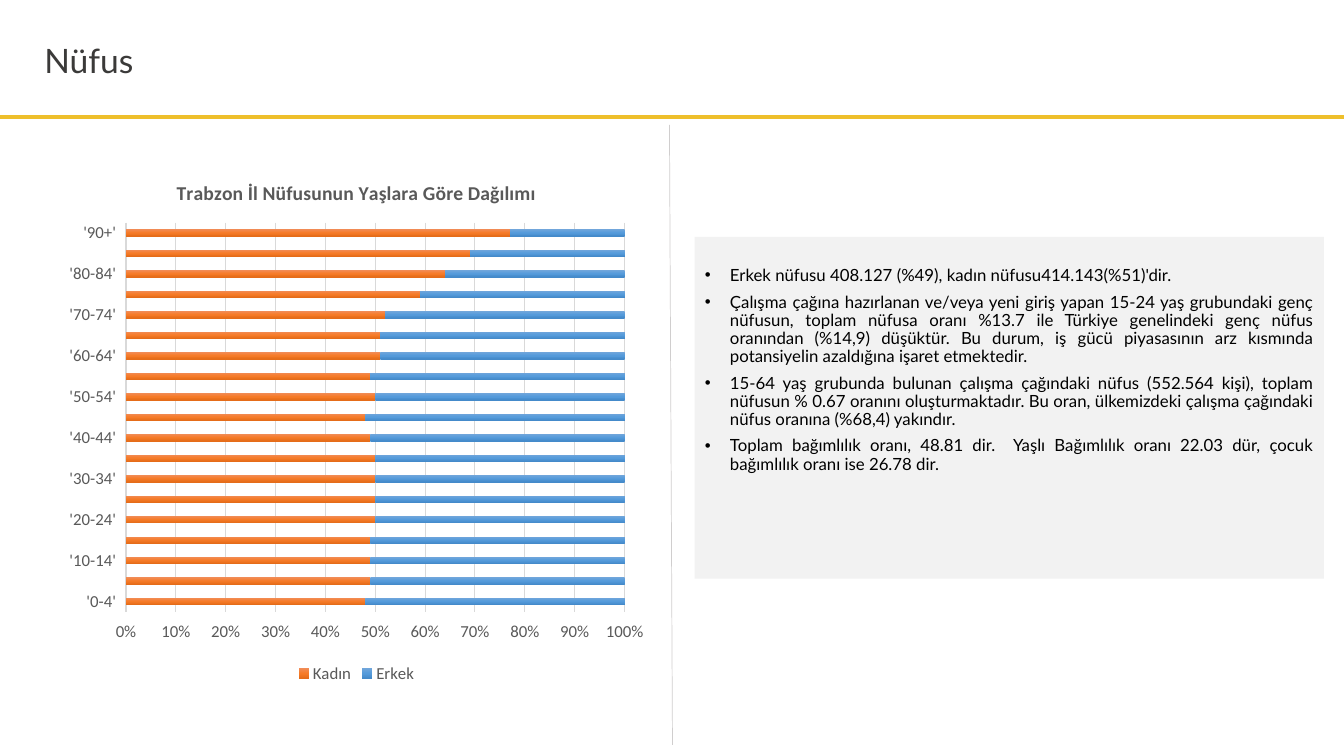
from dataclasses import dataclass

from lxml import etree
from pptx import Presentation
from pptx.chart.data import CategoryChartData
from pptx.dml.color import RGBColor
from pptx.enum import chart as charts, shapes, text
from pptx.oxml import parse_xml
from pptx.oxml.ns import nsdecls, qn
from pptx.util import Inches, Pt


@dataclass(frozen=True)
class Theme:
    text_font: str = "Lato"
    chart_font: str = "Calibri"
    title_size: int = 24
    chart_title_size: int = 14
    body_size: int = 12
    title_color: str = "3B3A39"
    body_color: str = "000000"
    panel: str = "F2F2F2"
    rule: str = "EEBF2B"
    divider: str = "D0CECE"
    label: str = "595959"
    grid: str = "D9D9D9"
    women: tuple = ("F18C57", "F67B28", "E56C19")
    men: tuple = ("71A6DB", "559BDB", "448ACA")


THEME = Theme()
AGE_GROUPS = [f"'{age}-{age + 4}'" for age in range(0, 90, 5)] + ["'90+'"]
WOMEN_SHARE = [48, 49, 49, 49, 50, 50, 50, 50, 49, 48, 50, 49, 51, 51, 52, 59, 64, 69, 77]
MEN_SHARE = [100 - share for share in WOMEN_SHARE]
FINDINGS = [
    "Erkek nüfusu 408.127 (%49), kadın nüfusu414.143(%51)'dir.",
    "Çalışma çağına hazırlanan ve/veya yeni giriş yapan 15-24 yaş grubundaki genç "
    "nüfusun, toplam nüfusa oranı %13.7 ile Türkiye genelindeki genç nüfus oranından "
    "(%14,9) düşüktür. Bu durum, iş gücü piyasasının arz kısmında potansiyelin "
    "azaldığına işaret etmektedir.",
    "15-64 yaş grubunda bulunan çalışma çağındaki nüfus (552.564 kişi), toplam nüfusun "
    "% 0.67 oranını oluşturmaktadır. Bu oran, ülkemizdeki çalışma çağındaki nüfus "
    "oranına (%68,4) yakındır.",
    "Toplam bağımlılık oranı, 48.81 dir.  Yaşlı Bağımlılık oranı 22.03 dür, çocuk "
    "bağımlılık oranı ise 26.78 dir.",
]


def apply(target, **values):
    for name, value in values.items():
        setattr(target, name, value)


def style_font(font, name, size, color, bold=False):
    apply(font, name=name, size=Pt(size), bold=bold)
    font.color.rgb = RGBColor.from_string(color)


def place(part, box):
    left, top, width, height = map(Inches, box)
    apply(part, left=left, top=top, width=width, height=height)


def add_rule(slide, start, end, color, width):
    rule = slide.shapes.add_connector(
        shapes.MSO_CONNECTOR.STRAIGHT, *map(Inches, (*start, *end)))
    rule.line.color.rgb = RGBColor.from_string(color)
    rule.line.width = Pt(width)
    etree.SubElement(rule._element.spPr, qn("a:effectLst"))


def fill_heading(slide, box):
    heading = slide.shapes.title
    place(heading, box)
    frame = heading.text_frame
    frame.text = "Nüfus"
    apply(frame, vertical_anchor=text.MSO_ANCHOR.MIDDLE, word_wrap=True,
          auto_size=text.MSO_AUTO_SIZE.NONE)
    paragraph = frame.paragraphs[0]
    apply(paragraph, alignment=text.PP_ALIGN.LEFT, line_spacing=0.9)
    style_font(paragraph.font, THEME.text_font, THEME.title_size, THEME.title_color)


def fill_findings(slide, box):
    findings = slide.placeholders[1]
    place(findings, box)
    findings.fill.solid()
    findings.fill.fore_color.rgb = RGBColor.from_string(THEME.panel)
    frame = findings.text_frame
    apply(frame, word_wrap=True, auto_size=text.MSO_AUTO_SIZE.NONE,
          vertical_anchor=text.MSO_ANCHOR.TOP, margin_top=Inches(0.3))
    frame.text = "\n".join(FINDINGS)
    for index, paragraph in enumerate(frame.paragraphs):
        properties = paragraph._p.get_or_add_pPr()
        properties.set("marL", str(Inches(0.25)))
        properties.set("indent", str(Inches(-0.25)))
        etree.SubElement(properties, qn("a:buFont")).set("typeface", "Arial")
        etree.SubElement(properties, qn("a:buChar")).set("char", "•")
        apply(paragraph, alignment=text.PP_ALIGN.JUSTIFY, line_spacing=0.9,
              space_before=Pt(6 if index else 0), space_after=Pt(0))
        style_font(paragraph.font, THEME.text_font, THEME.body_size, THEME.body_color)


def shade_series(series, colors):
    """Give the bars a vertical gradient with evenly spaced stops."""
    step = 100000 // (len(colors) - 1)
    stops = "".join(f'<a:gs pos="{index * step}"><a:srgbClr val="{color}"/></a:gs>'
                    for index, color in enumerate(colors))
    gradient = parse_xml(f'<a:gradFill {nsdecls("a")} rotWithShape="1"><a:gsLst>{stops}'
                         '</a:gsLst><a:lin ang="5400000" scaled="0"/></a:gradFill>')
    series._element.get_or_add_spPr().insert(0, gradient)


def add_age_chart(slide, box):
    data = CategoryChartData(number_format="0")
    data.categories = AGE_GROUPS
    data.add_series("Kadın", WOMEN_SHARE)
    data.add_series("Erkek", MEN_SHARE)
    chart = slide.shapes.add_chart(
        charts.XL_CHART_TYPE.BAR_STACKED_100, *map(Inches, box), data).chart
    style_font(chart.font, THEME.chart_font, THEME.body_size, THEME.label)

    title = chart.chart_title.text_frame
    title.text = "Trabzon İl Nüfusunun Yaşlara Göre Dağılımı"
    style_font(title.paragraphs[0].runs[0].font, THEME.chart_font,
               THEME.chart_title_size, THEME.label, bold=True)
    chart.chart_title.include_in_layout = False

    plot = chart.plots[0]
    apply(plot, gap_width=196, overlap=100, vary_by_categories=False)
    for series, colors in zip(plot.series, (THEME.women, THEME.men)):
        shade_series(series, colors)

    ages, shares = chart.category_axis, chart.value_axis
    apply(ages, major_tick_mark=charts.XL_TICK_MARK.NONE,
          tick_label_position=charts.XL_TICK_LABEL_POSITION.LOW)
    apply(shares, major_tick_mark=charts.XL_TICK_MARK.OUTSIDE, has_major_gridlines=True)
    apply(shares.tick_labels, number_format="0%", number_format_is_linked=False)
    shares.format.line.fill.background()
    for line, width in ((ages.format.line, 1), (shares.major_gridlines.format.line, 0.75)):
        line.color.rgb = RGBColor.from_string(THEME.grid)
        line.width = Pt(width)

    chart.has_legend = True
    apply(chart.legend, position=charts.XL_LEGEND_POSITION.BOTTOM, include_in_layout=False)
    for labels in (ages.tick_labels, shares.tick_labels, chart.legend):
        style_font(labels.font, THEME.chart_font, THEME.body_size, THEME.label)


def build_population_slide(deck):
    slide = deck.slides.add_slide(deck.slide_layouts[1])
    add_rule(slide, (0, 1.16), (13.33, 1.16), THEME.rule, 3)
    add_rule(slide, (6.64, 1.24), (6.67, 7.39), THEME.divider, 0.5)
    add_age_chart(slide, (0.57, 1.59, 5.93, 5.23))
    fill_findings(slide, (6.89, 2.35, 6.24, 3.39))
    fill_heading(slide, (0.34, 0.2, 12.65, 0.85))


def main():
    deck = Presentation()
    apply(deck, slide_width=Inches(13.33), slide_height=Inches(7.5))
    build_population_slide(deck)
    deck.save("out.pptx")


if __name__ == "__main__":
    main()
